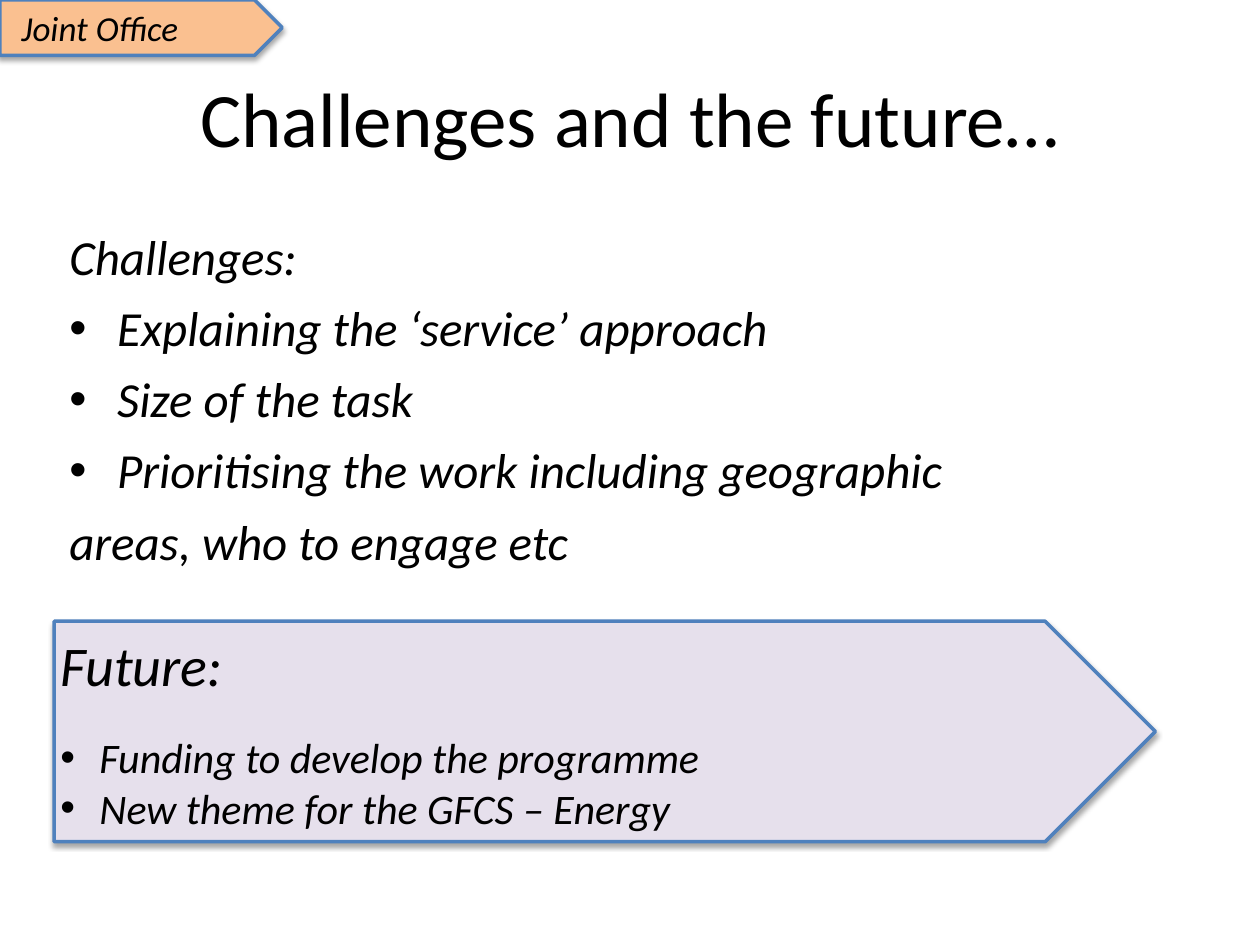
from dataclasses import dataclass

from lxml import etree
from pptx import Presentation
from pptx import util as u
from pptx.dml.color import RGBColor
from pptx.enum import shapes, text
from pptx.oxml import ns

BLACK = RGBColor(0x00, 0x00, 0x00)
BLUE = RGBColor(0x4F, 0x81, 0xBD)
LILAC = RGBColor(0xE6, 0xE0, 0xEC)
ORANGE = RGBColor(0xFA, 0xC0, 0x90)
INSET = 0.05


@dataclass
class Line:
    wording: str
    size: float
    bullet: bool = False
    indent: float = 0
    space_before: float = 0
    italic: bool = True
    align: text.PP_ALIGN = text.PP_ALIGN.LEFT


@dataclass
class Arrow:
    left: float
    top: float
    width: float
    height: float
    fill: RGBColor
    lines: list[Line]
    left_inset: float = INSET


TITLE = Line("Challenges and the future…", 44, italic=False, align=text.PP_ALIGN.CENTER)
CHALLENGES = [
    Line("Challenges:", 28, space_before=7),
    Line("Explaining the ‘service’ approach", 28, True, 0.38, 7),
    Line("Size of the task", 28, True, 0.38, 7),
    Line("Prioritising the work including geographic", 28, True, 0.38, 7),
    Line("areas, who to engage etc", 28, space_before=7),
]
FUTURE = [
    Line("Future:", 32),
    Line("Funding to develop the programme", 24, True, 0.31, 19.5),
    Line("New theme for the GFCS – Energy", 24, True, 0.31),
]
ARROWS = [
    Arrow(0.43, 4.93, 8.74, 1.75, LILAC, FUTURE),
    Arrow(0, 0, 2.24, 0.44, ORANGE, [Line("Joint Office", 20)], 0.17),
]


def set_bullet(paragraph, line: Line) -> None:
    properties = paragraph._p.get_or_add_pPr()
    properties.set("marL", str(u.Inches(line.indent)))
    properties.set("indent", str(-u.Inches(line.indent)))
    if line.bullet:
        font = etree.SubElement(properties, ns.qn("a:buFont"))
        font.set("typeface", "Arial")
        etree.SubElement(properties, ns.qn("a:buChar")).set("char", "•")
    else:
        etree.SubElement(properties, ns.qn("a:buNone"))


def write_lines(shape, lines: list[Line], anchor: text.MSO_ANCHOR,
                left_inset: float = INSET) -> None:
    frame = shape.text_frame
    settings = {
        "word_wrap": True,
        "vertical_anchor": anchor,
        "margin_left": u.Inches(left_inset),
        "margin_top": u.Inches(INSET),
        "margin_right": u.Inches(INSET),
        "margin_bottom": u.Inches(INSET),
    }
    for name, value in settings.items():
        setattr(frame, name, value)
    for index, line in enumerate(lines):
        paragraph = frame.add_paragraph() if index else frame.paragraphs[0]
        paragraph.alignment = line.align
        paragraph.space_before = u.Pt(line.space_before)
        set_bullet(paragraph, line)
        run = paragraph.add_run()
        run.text = line.wording
        formats = {"name": "Calibri", "size": u.Pt(line.size), "italic": line.italic}
        for name, value in formats.items():
            setattr(run.font, name, value)
        run.font.color.rgb = BLACK


def add_shadow(shape) -> None:
    """Give the shape a soft shadow straight below it."""
    shape.shadow.inherit = False
    effects = shape._element.spPr.find(ns.qn("a:effectLst"))
    shadow = etree.SubElement(effects, ns.qn("a:outerShdw"))
    values = {"blurRad": u.Pt(3), "dist": u.Pt(1.8), "dir": 90 * 60000, "rotWithShape": 0}
    for name, value in values.items():
        shadow.set(name, str(int(value)))
    color = etree.SubElement(shadow, ns.qn("a:srgbClr"))
    color.set("val", str(BLACK))
    etree.SubElement(color, ns.qn("a:alpha")).set("val", "35000")


def add_arrow(slide, arrow: Arrow) -> None:
    box = map(u.Inches, (arrow.left, arrow.top, arrow.width, arrow.height))
    shape = slide.shapes.add_shape(shapes.MSO_SHAPE.PENTAGON, *box)
    shape.fill.solid()
    shape.fill.fore_color.rgb = arrow.fill
    shape.line.color.rgb = BLUE
    shape.line.width = u.Pt(2)
    add_shadow(shape)
    write_lines(shape, arrow.lines, text.MSO_ANCHOR.MIDDLE, arrow.left_inset)


def main() -> None:
    presentation = Presentation()
    presentation.slide_width = u.Inches(10)
    presentation.slide_height = u.Inches(7.5)
    slide = presentation.slides.add_slide(presentation.slide_layouts.get_by_name("Title Only"))

    title = slide.shapes.title
    place = {"left": 0.5, "top": 0.1, "width": 9, "height": 1.65}
    for name, value in place.items():
        setattr(title, name, u.Inches(value))
    write_lines(title, [TITLE], text.MSO_ANCHOR.MIDDLE)

    challenges = slide.shapes.add_textbox(*map(u.Inches, (0.5, 1.75, 8.99, 3.02)))
    write_lines(challenges, CHALLENGES, text.MSO_ANCHOR.TOP)

    for arrow in ARROWS:
        add_arrow(slide, arrow)
    presentation.save("out.pptx")


if __name__ == "__main__":
    main()
